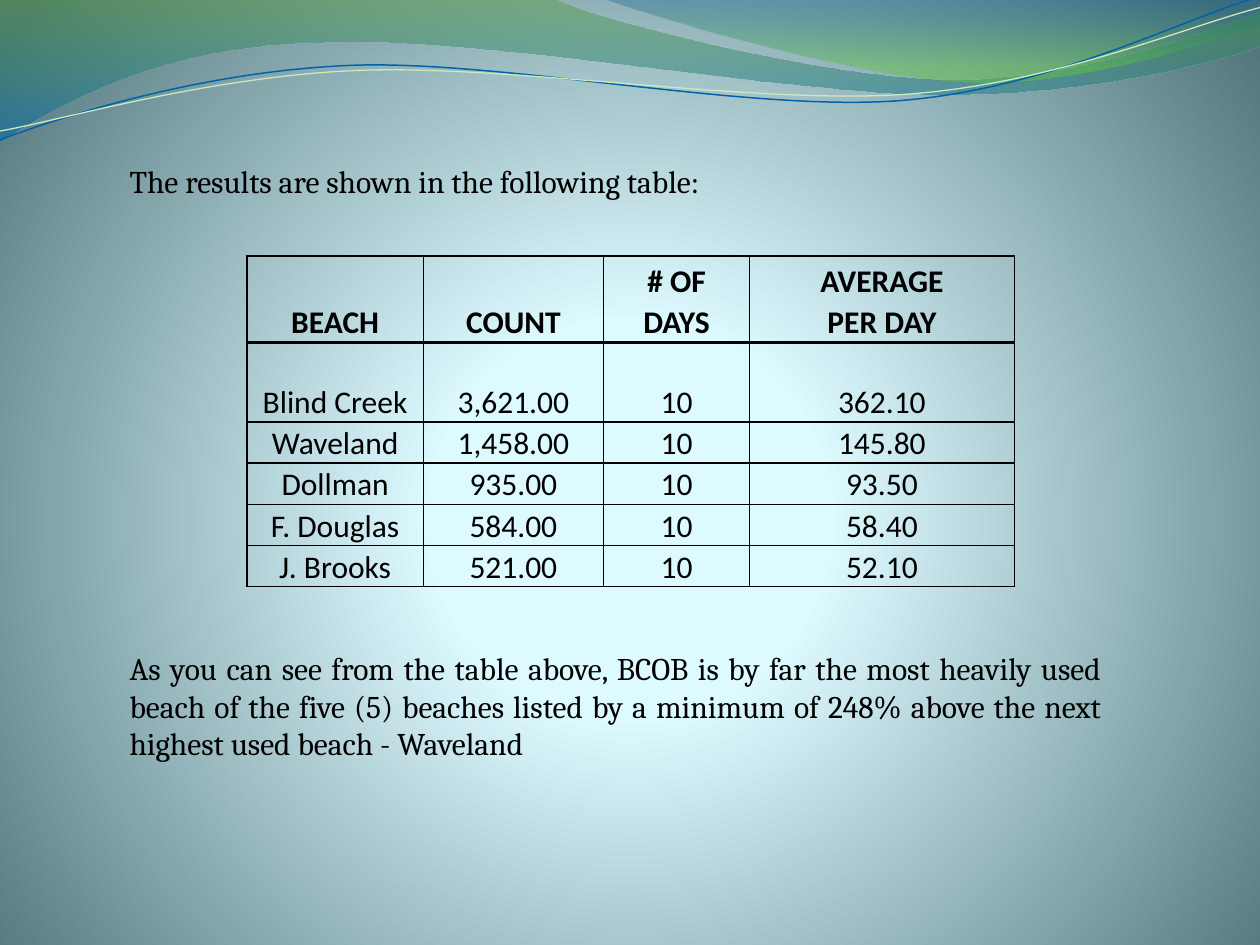
from lxml import etree
from pptx import Presentation
from pptx import util as u
from pptx.dml.color import RGBColor
from pptx.enum import text
from pptx.oxml import parse_xml
from pptx.oxml.ns import nsdecls, qn

W, H = 10, 7.5
UNITS = 1000  # outline units to the inch
BLACK = "000000"
HEADER_ROWS = 2
ROWS = [
    ["", "", "# OF", "AVERAGE"],
    ["BEACH", "COUNT", "DAYS", "PER DAY"],
    ["", "", "", ""],
    ["Blind Creek", "3,621.00", "10", "362.10"],
    ["Waveland", "1,458.00", "10", "145.80"],
    ["Dollman", "935.00", "10", "93.50"],
    ["F. Douglas", "584.00", "10", "58.40"],
    ["J. Brooks", "521.00", "10", "52.10"],
]
COL_WIDTHS = [1.4, 1.43, 1.16, 2.1]
ROW_HEIGHTS = [0.36] + [0.3] * 7
# Bottom edge of each row in points; 0 leaves the edge open
ROW_EDGES = [0, 2.25, 0, 1, 1, 1, 1, 1]

# Outlines: a pair is a straight step, a six-number tuple is a Bezier curve
WIDE_WAVE = [(0, -0.01), (4.4, -0.01), (4.76, 0.17, 6.64, 0.63, 7.58, 0.63),
             (8.53, 0.63, 9.58, 0.26, 10, 0.09), (10.01, 0.36),
             (9.83, 0.44, 8.7, 0.76, 7.46, 0.75),
             (6.22, 0.75, 3.82, 0.28, 2.57, 0.34),
             (1.29, 0.35, 0.46, 0.83, -0.01, 1.13)]
RIGHT_WAVE = [(4.79, -0.01), (5.09, 0.11, 6.82, 0.62, 7.69, 0.65),
              (8.56, 0.69, 9.61, 0.32, 10, 0.21), (10, 0)]
BLUE_LINE = [(0, 1.11), (0.48, 0.93, 1.58, 0.57, 2.77, 0.52),
             (3.95, 0.47, 5.93, 0.89, 7.13, 0.8),
             (8.33, 0.71, 9.38, 0.15, 9.98, -0.02)]
PALE_LINE = [(0, 1.04), (0.47, 0.96, 1.64, 0.61, 2.83, 0.56),
             (4.03, 0.51, 5.97, 0.83, 7.17, 0.75),
             (8.36, 0.67, 9.41, 0.21, 10, 0.06)]


def rgb(value):
    return RGBColor.from_string(value)


def gradient(stops, direction):
    """Gradient fill element from (position %, colour, opacity %) stops."""
    marks = "".join(
        f'<a:gs pos="{pos * 1000}"><a:srgbClr val="{color}">'
        f'<a:alpha val="{alpha * 1000}"/></a:srgbClr></a:gs>'
        for pos, color, alpha in stops)
    return parse_xml(f'<a:gradFill {nsdecls("a")} rotWithShape="1">'
                     f'<a:gsLst>{marks}</a:gsLst>{direction}</a:gradFill>')


def add_background(s):
    s.background.fill.solid()
    solid = s.element.find(".//" + qn("p:bgPr")).find(qn("a:solidFill"))
    focus = ('<a:path path="circle"><a:fillToRect l="10000" t="110000" '
             'r="10000" b="100000"/></a:path>')
    stops = [(0, "DEFBFF", 100), (25, "DDFAFF", 100), (100, "52767C", 100)]
    solid.getparent().replace(solid, gradient(stops, focus))


def add_outline(s, outline, close):
    """Freeform through the end of each step, then bent where it is a curve."""
    scaled = [[round(v * UNITS) for v in seg] for seg in outline]
    ends = [seg[-2:] for seg in scaled]
    builder = s.shapes.build_freeform(*ends[0], scale=u.Inches(1) / UNITS)
    builder.add_line_segments(ends[1:], close=close)
    sp = builder.convert_to_shape()
    sp.shadow.inherit = False
    left, top = (min(axis) for axis in zip(*ends))
    steps = list(sp.element.iter(qn("a:lnTo")))
    for step, seg in zip(steps, scaled[1:]):
        if len(seg) == 6:
            curve = etree.Element(qn("a:cubicBezTo"))
            for x, y in zip(seg[::2], seg[1::2]):
                etree.SubElement(curve, qn("a:pt"),
                                 x=str(x - left), y=str(y - top))
            step.getparent().replace(step, curve)
    return sp


def add_waves(s):
    waves = [(WIDE_WAVE, [(0, "569D3E", 45), (100, "0066AE", 55)]),
             (RIGHT_WAVE, [(0, "00538E", 30), (80, "61C441", 45)])]
    for outline, stops in waves:
        sp = add_outline(s, outline, True)
        sp.line.fill.background()
        sp.fill.background()
        blank = sp.element.spPr.find(qn("a:noFill"))
        downward = '<a:lin ang="5400000" scaled="0"/>'
        blank.getparent().replace(blank, gradient(stops, downward))
    for outline, color, width in [(BLUE_LINE, "0063A9", 0.85),
                                  (PALE_LINE, "CAE9C0", 0.75)]:
        sp = add_outline(s, outline, False)
        sp.fill.background()
        sp.line.color.rgb = rgb(color)
        sp.line.width = u.Pt(width)


def format_run(r, font, bold=False):
    r.font.name, r.font.size, r.font.bold = font, u.Pt(18), bold
    r.font.color.rgb = rgb(BLACK)


def set_borders(cell, top, bottom):
    tc_pr = cell._tc.get_or_add_tcPr()
    edges = [("lnL", 1), ("lnR", 1), ("lnT", top), ("lnB", bottom)]
    for i, (tag, width) in enumerate(edges):
        ln = etree.Element(qn("a:" + tag), w=str(u.Pt(width)))
        if width:
            fill = etree.SubElement(ln, qn("a:solidFill"))
            etree.SubElement(fill, qn("a:srgbClr"), val=BLACK)
        else:
            etree.SubElement(ln, qn("a:noFill"))
        tc_pr.insert(i, ln)


def add_beach_table(s, left, top):
    frame = s.shapes.add_table(
        len(ROWS), len(COL_WIDTHS), u.Inches(left), u.Inches(top),
        u.Inches(sum(COL_WIDTHS)), u.Inches(sum(ROW_HEIGHTS)))
    table = frame.table
    table.first_row = table.horz_banding = False
    for col, width in zip(table.columns, COL_WIDTHS):
        col.width = u.Inches(width)
    # The edge above the first row is a plain one, like the last row's
    for i, (row, height) in enumerate(zip(table.rows, ROW_HEIGHTS)):
        row.height = u.Inches(height)
        for cell, value in zip(row.cells, ROWS[i]):
            cell.margin_left = cell.margin_right = u.Inches(0.07)
            cell.margin_top = cell.margin_bottom = 0
            cell.vertical_anchor = text.MSO_ANCHOR.BOTTOM
            cell.fill.background()
            set_borders(cell, ROW_EDGES[i - 1], ROW_EDGES[i])
            if not value:
                continue
            p = cell.text_frame.paragraphs[0]
            p.text = value
            p.alignment = text.PP_ALIGN.CENTER
            p.line_spacing = 1.07
            format_run(p.runs[0], "Calibri", i < HEADER_ROWS)


def add_paragraph(s, box, words, align):
    tf = s.shapes.add_textbox(*map(u.Inches, box)).text_frame
    tf.word_wrap = True
    tf.auto_size = text.MSO_AUTO_SIZE.SHAPE_TO_FIT_TEXT
    p = tf.paragraphs[0]
    p.text = words
    p.alignment = align
    format_run(p.runs[0], "Cambria")


def main():
    prs = Presentation()
    prs.slide_width, prs.slide_height = u.Inches(W), u.Inches(H)
    s = prs.slides.add_slide(prs.slide_layouts[6])
    add_background(s)
    add_waves(s)
    add_beach_table(s, 1.96, 2.03)
    add_paragraph(s, (0.93, 1.24, 5.5, 0.4),
                  "The results are shown in the following table:",
                  text.PP_ALIGN.LEFT)
    add_paragraph(s, (0.93, 5.1, 7.91, 1.01),
                  "As you can see from the table above, BCOB is by far the most "
                  "heavily used beach of the five (5) beaches listed by a minimum "
                  "of 248% above the next highest used beach - Waveland",
                  text.PP_ALIGN.JUSTIFY)
    prs.save("out.pptx")


if __name__ == "__main__":
    main()
